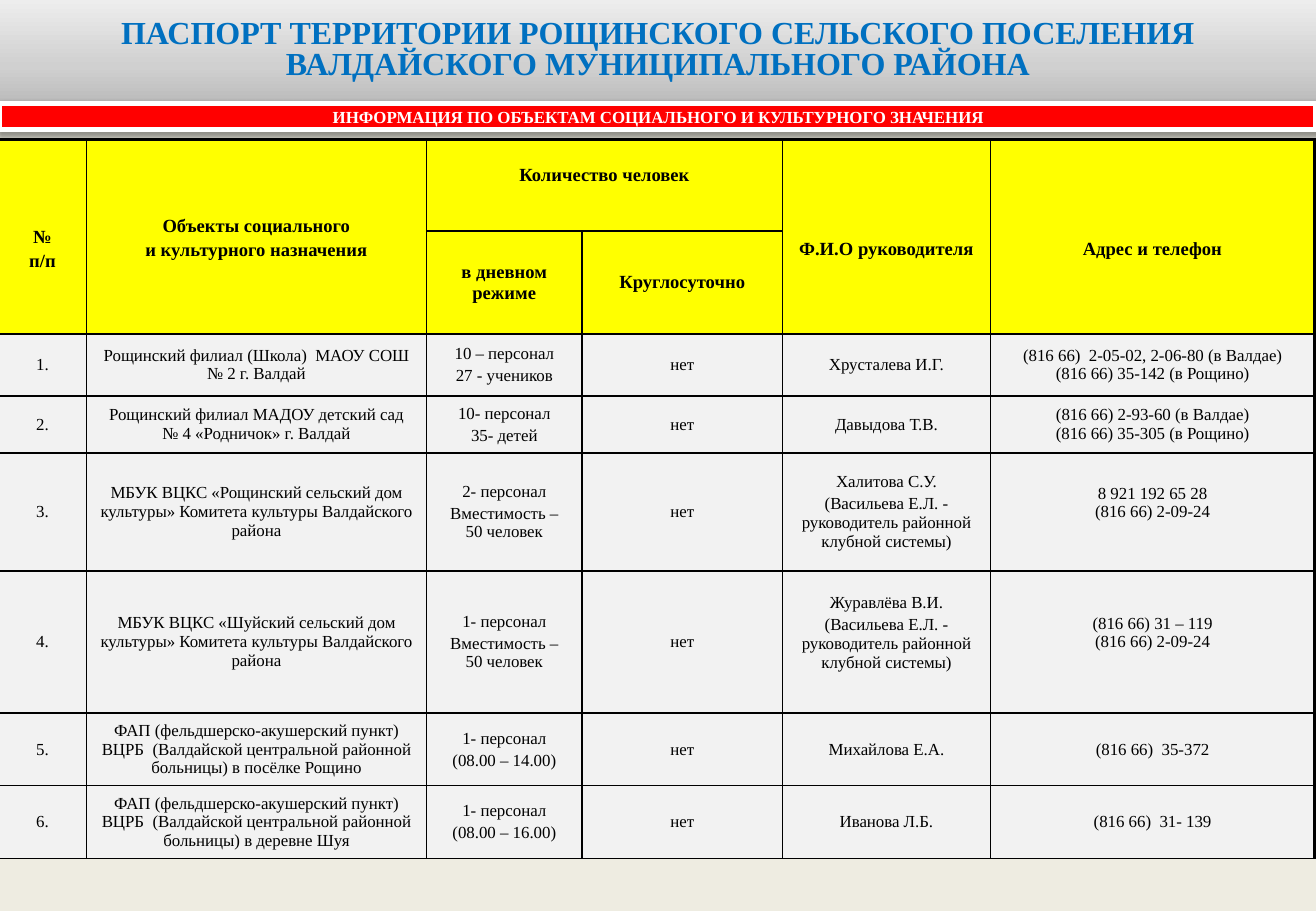
from lxml import etree
from pptx import Presentation
from pptx.dml.color import RGBColor
from pptx.enum.shapes import MSO_SHAPE
from pptx.enum.text import MSO_ANCHOR, PP_ALIGN
from pptx.oxml.ns import qn
from pptx.util import Inches, Pt

RECTANGLE = MSO_SHAPE.RECTANGLE
MIDDLE = MSO_ANCHOR.MIDDLE
CENTER = PP_ALIGN.CENTER
FONT = "Times New Roman"
COLORS = {
    "background": "EEECE1", "title": "0070C0", "bar": "FF0000", "white": "FFFFFF",
    "black": "000000", "header": "FFFF00", "body": "F2F2F2",
}
TITLE_GRADIENT = [(0, "BCBCBC"), (35, "D0D0D0"), (100, "EDEDED")]

TITLE = ("ПАСПОРТ ТЕРРИТОРИИ РОЩИНСКОГО СЕЛЬСКОГО ПОСЕЛЕНИЯ "
         "ВАЛДАЙСКОГО МУНИЦИПАЛЬНОГО РАЙОНА")
SUBTITLE = "ИНФОРМАЦИЯ ПО ОБЪЕКТАМ СОЦИАЛЬНОГО И КУЛЬТУРНОГО ЗНАЧЕНИЯ"

COLUMN_WIDTHS = [0.72, 2.8, 1.28, 1.65, 1.71, 2.67]
ROW_HEIGHTS = [0.75, 0.85, 0.51, 0.47, 0.97, 1.17, 0.6, 0.6]
HEADER_ROWS = 2
# Each cell holds its paragraphs, one per line; None is covered by a merged cell.
ROWS = [
    ["№\nп/п", "Объекты социального\nи культурного назначения", "Количество человек",
     None, "Ф.И.О руководителя", "Адрес и телефон"],
    [None, None, "в дневном режиме", "Круглосуточно", None, None],
    ["1.", "Рощинский филиал (Школа)  МАОУ СОШ № 2 г. Валдай",
     "10 – персонал\n27 - учеников", "нет", "Хрусталева И.Г.",
     "(816 66)  2-05-02, 2-06-80 (в Валдае)\n(816 66) 35-142 (в Рощино)"],
    ["2.", "Рощинский филиал МАДОУ детский сад № 4 «Родничок» г. Валдай",
     "10- персонал\n35- детей", "нет", "Давыдова Т.В.",
     "(816 66) 2-93-60 (в Валдае)\n(816 66) 35-305 (в Рощино)"],
    ["3.", "МБУК ВЦКС «Рощинский сельский дом культуры» Комитета культуры Валдайского района",
     "2- персонал\nВместимость – 50 человек", "нет",
     "Халитова С.У.\n(Васильева Е.Л. - руководитель районной клубной системы)",
     "8 921 192 65 28\n(816 66) 2-09-24"],
    ["4.", "МБУК ВЦКС «Шуйский сельский дом культуры» Комитета культуры Валдайского района",
     "1- персонал\nВместимость – 50 человек", "нет",
     "Журавлёва В.И.\n(Васильева Е.Л. - руководитель районной клубной системы)",
     "(816 66) 31 – 119\n(816 66) 2-09-24"],
    ["5.", "ФАП (фельдшерско-акушерский пункт) ВЦРБ  (Валдайской центральной районной "
     "больницы) в посёлке Рощино",
     "1- персонал\n(08.00 – 14.00)", "нет", "Михайлова Е.А.", "(816 66)  35-372"],
    ["6.", "ФАП (фельдшерско-акушерский пункт) ВЦРБ  (Валдайской центральной районной "
     "больницы) в деревне Шуя",
     "1- персонал\n(08.00 – 16.00)", "нет", "Иванова Л.Б.", "(816 66)  31- 139"],
]
MERGES = [((0, column), (1, column)) for column in (0, 1, 4, 5)] + [((0, 2), (0, 3))]
TIGHT_COLUMNS = (1, 5)
# Extra top (positive) or bottom (negative) margin by (row, column)
TEXT_SHIFTS = {(0, 0): 0.2, (0, 1): 0.03, (0, 2): -0.16, (0, 4): 0.2, (0, 5): 0.2,
               (4, 5): -0.15, (5, 4): -0.15, (5, 5): -0.15}


def color(name):
    return RGBColor.from_string(COLORS[name])


def add_text(paragraph, text, size, color_name, bold):
    paragraph.alignment = CENTER
    run = paragraph.add_run()
    run.text = text
    run.font.name = FONT
    run.font.size = Pt(size)
    run.font.bold = bold
    run.font.color.rgb = color(color_name)


def add_color(parent, value):
    return etree.SubElement(parent, qn("a:srgbClr"), val=value)


def add_banner(slide, top, height, text, size, color_name, blur):
    """Add a full-width rectangle with centred text and a soft shadow below it."""
    shape = slide.shapes.add_shape(RECTANGLE, 0, Inches(top), Inches(10.83), Inches(height))
    shape.shadow.inherit = False
    effects = shape._element.spPr.find(qn("a:effectLst"))
    shadow = etree.SubElement(effects, qn("a:outerShdw"), blurRad=str(Pt(blur)),
                              dist=str(Pt(1.6)), dir="5400000", rotWithShape="0")
    etree.SubElement(add_color(shadow, COLORS["black"]), qn("a:alpha"), val="38000")
    frame = shape.text_frame
    frame.word_wrap = True
    frame.vertical_anchor = MIDDLE
    frame.margin_left = frame.margin_right = Inches(0.07)
    frame.margin_top = frame.margin_bottom = Inches(0.04)
    add_text(frame.paragraphs[0], text, size, color_name, True)
    return shape


def set_borders(cell, row, column):
    properties = cell._tc.get_or_add_tcPr()
    thick = {"L": column == 0, "R": column == len(COLUMN_WIDTHS) - 1, "T": row == 0, "B": False}
    for side, is_thick in thick.items():
        line = etree.SubElement(properties, qn(f"a:ln{side}"), w=str(Pt(2.25 if is_thick else 1)))
        add_color(etree.SubElement(line, qn("a:solidFill")), COLORS["black"])


def fill_cell(cell, row, column, text):
    is_header = row < HEADER_ROWS
    set_borders(cell, row, column)
    cell.fill.solid()
    cell.fill.fore_color.rgb = color("header" if is_header else "body")
    cell.vertical_anchor = MIDDLE
    shift = TEXT_SHIFTS.get((row, column), 0)
    cell.margin_left = cell.margin_right = Inches(0.11)
    cell.margin_top = Inches(0.05 + max(shift, 0))
    cell.margin_bottom = Inches(0.05 + max(-shift, 0))
    if text is None:
        return
    frame = cell.text_frame
    for index, line in enumerate(text.split("\n")):
        paragraph = frame.add_paragraph() if index else frame.paragraphs[0]
        if is_header or column not in TIGHT_COLUMNS:
            paragraph.space_before = Pt(2)
        add_text(paragraph, line, 11 if is_header else 10, "black", is_header)


def add_objects_table(slide):
    table = slide.shapes.add_table(
        len(ROWS), len(COLUMN_WIDTHS), Inches(-0.01), Inches(1.15),
        Inches(sum(COLUMN_WIDTHS)), Inches(sum(ROW_HEIGHTS))).table
    table.first_row = table.horz_banding = False
    for column, width in zip(table.columns, COLUMN_WIDTHS):
        column.width = Inches(width)
    for row, height in zip(table.rows, ROW_HEIGHTS):
        row.height = Inches(height)
    for row, texts in enumerate(ROWS):
        for column, text in enumerate(texts):
            fill_cell(table.cell(row, column), row, column, text)
    for first, last in MERGES:
        table.cell(*first).merge(table.cell(*last))


def main():
    presentation = Presentation()
    presentation.slide_width = Inches(10.83)
    presentation.slide_height = Inches(7.5)
    slide = presentation.slides.add_slide(presentation.slide_layouts[6])
    slide.background.fill.solid()
    slide.background.fill.fore_color.rgb = color("background")

    add_objects_table(slide)

    title = add_banner(slide, 0, 0.84, TITLE, 19, "title", 0)
    title.text_frame.paragraphs[0].line_spacing = 0.8
    title.line.fill.background()
    title.fill.gradient()
    title.fill.gradient_angle = 90
    stops = title._element.spPr.find(qn("a:gradFill")).find(qn("a:gsLst"))
    stops.clear()
    for position, value in TITLE_GRADIENT:
        add_color(etree.SubElement(stops, qn("a:gs"), pos=str(position * 1000)), value)

    subtitle = add_banner(slide, 0.85, 0.22, SUBTITLE, 10, "white", 3.1)
    subtitle.fill.solid()
    subtitle.fill.fore_color.rgb = color("bar")
    subtitle.line.color.rgb = color("white")
    subtitle.line.width = Pt(3)

    presentation.save("out.pptx")


if __name__ == "__main__":
    main()
